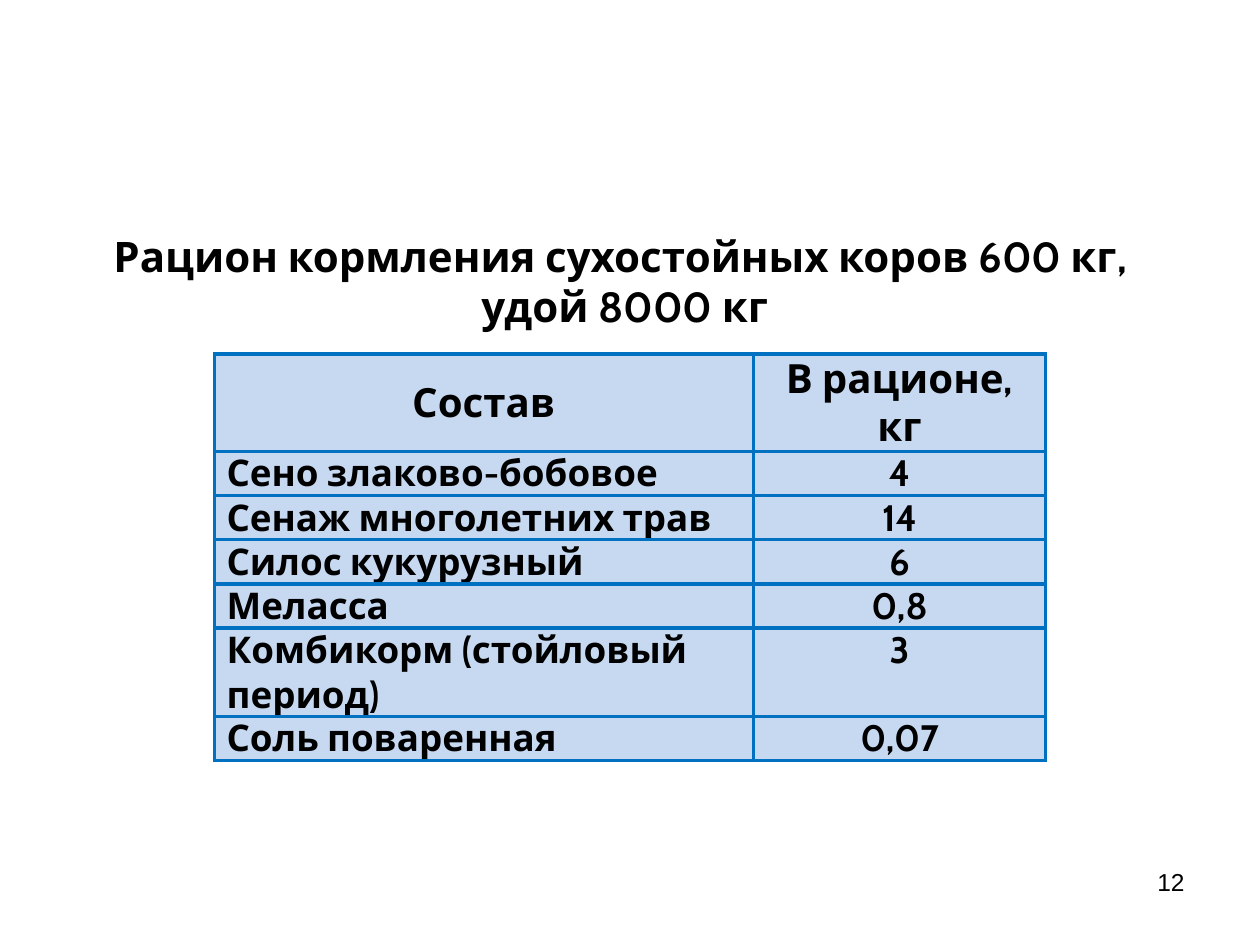
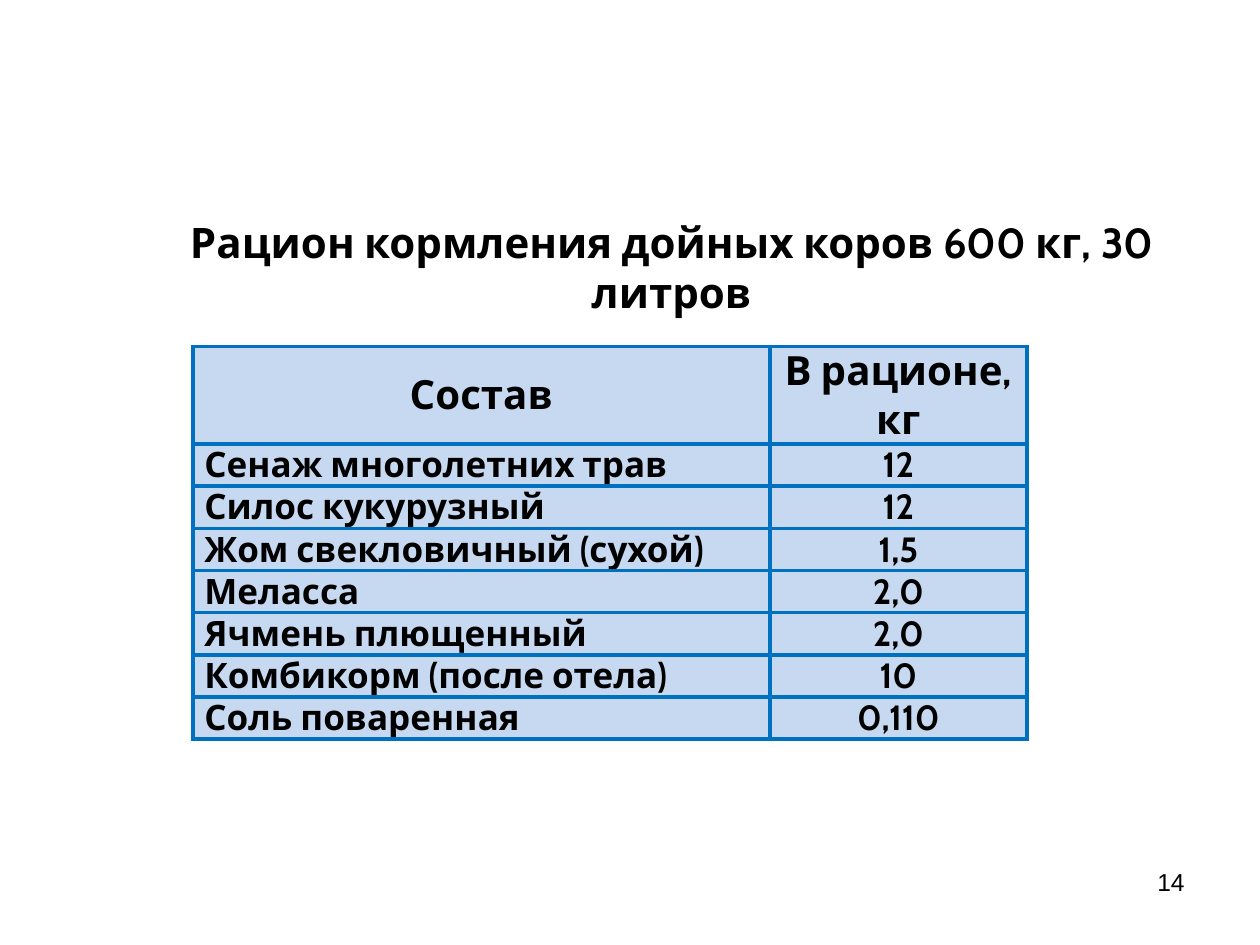
from lxml import etree
from pptx import Presentation
from pptx.dml.color import RGBColor
from pptx.enum.text import MSO_ANCHOR, PP_ALIGN
from pptx.oxml.ns import qn
from pptx.util import Cm, Pt

LEFT, CENTER, RIGHT = PP_ALIGN.LEFT, PP_ALIGN.CENTER, PP_ALIGN.RIGHT
TOP, MIDDLE = MSO_ANCHOR.TOP, MSO_ANCHOR.MIDDLE
COLORS = {"text": "000000", "cell": "C6D9F1", "border": "0070C0"}
BODY_FONT, NUMBER_FONT = "Cabin", "Arial"
BLANK_LAYOUT = 6
BORDER_WIDTH = Pt(2.25)
HEADER = ("Состав", "В рационе, кг")
HEADER_HEIGHT = 1.96
NUMBER_BOX = (18.21, 17.35, 5.92, 1.32)

RATIONS = [
    {
        "title": ["Рацион кормления сухостойных коров 600 кг, ", "удой 8000 кг"],
        "title_box": (1.09, 4.52, 23.01, 2.31),
        "table_at": (4.32, 7.14),
        "columns": (10.87, 5.89),
        "row_height": 0.89,
        "size": 21,
        "margin": 0.25,
        "feed_anchor": MIDDLE,
        "feeds": [
            ("Сено злаково-бобовое", "4"),
            ("Сенаж многолетних трав", "14"),
            ("Силос кукурузный", "6"),
            ("Меласса", "0,8"),
            ("Комбикорм (стойловый период)", "3"),
            ("Соль поваренная", "0,07"),
        ],
        "two_line_feeds": {"Комбикорм (стойловый период)"},
        "number": "12",
    },
    {
        "title": ["Рацион кормления дойных коров 600 кг, 30 литров"],
        "title_box": (2.49, 4.24, 22.1, 2.31),
        "table_at": (3.89, 6.99),
        "columns": (11.63, 5.18),
        "row_height": 0.85,
        "size": 20,
        "margin": 0.23,
        "feed_anchor": TOP,
        "feeds": [
            ("Сенаж многолетних трав", "12"),
            ("Силос кукурузный", "12"),
            ("Жом свекловичный (сухой)", "1,5"),
            ("Меласса", "2,0"),
            ("Ячмень плющенный", "2,0"),
            ("Комбикорм (после отела)", "10"),
            ("Соль поваренная", "0,110"),
        ],
        "two_line_feeds": set(),
        "number": "14",
    },
]


def write(frame, lines, size, align=LEFT, font=BODY_FONT, bold=True):
    """Write lines of text into a text frame, one paragraph each."""
    frame.word_wrap = True
    for index, line in enumerate(lines):
        paragraph = frame.paragraphs[0] if index == 0 else frame.add_paragraph()
        paragraph.alignment = align
        run = paragraph.add_run()
        run.text = line
        run.font.name = font
        run.font.size = Pt(size)
        run.font.bold = bold
        run.font.color.rgb = RGBColor.from_string(COLORS["text"])


def add_text(slide, box, lines, **style):
    """Add a text box in the given box in centimetres."""
    frame = slide.shapes.add_textbox(*map(Cm, box)).text_frame
    write(frame, lines, **style)


def add_borders(cell):
    """Draw a solid line on all four sides of a cell."""
    properties = cell._tc.get_or_add_tcPr()
    for side in ("a:lnL", "a:lnR", "a:lnT", "a:lnB"):
        line = etree.SubElement(properties, qn(side), w=str(BORDER_WIDTH))
        fill = etree.SubElement(line, qn("a:solidFill"))
        etree.SubElement(fill, qn("a:srgbClr"), val=COLORS["border"])


def fill_cell(cell, text, margin, anchor, **style):
    """Give a cell its borders, fill, margins and text."""
    add_borders(cell)
    cell.fill.solid()
    cell.fill.fore_color.rgb = RGBColor.from_string(COLORS["cell"])
    cell.margin_left = cell.margin_right = Cm(margin)
    cell.margin_top = cell.margin_bottom = 0
    cell.vertical_anchor = anchor
    write(cell.text_frame, [text], **style)


def add_feed_table(slide, ration):
    """Add the table of feeds and their amounts."""
    feeds, columns, margin = ration["feeds"], ration["columns"], ration["margin"]
    heights = [HEADER_HEIGHT] + [
        ration["row_height"] * (2 if feed in ration["two_line_feeds"] else 1)
        for feed, _ in feeds
    ]
    box = (*ration["table_at"], sum(columns), sum(heights))
    table = slide.shapes.add_table(len(heights), len(columns), *map(Cm, box)).table
    table.first_row = table.horz_banding = False
    for column, width in zip(table.columns, columns):
        column.width = Cm(width)
    for row, height in zip(table.rows, heights):
        row.height = Cm(height)
    for index, heading in enumerate(HEADER):
        fill_cell(table.cell(0, index), heading, margin, MIDDLE, size=23, align=CENTER)
    for index, (feed, amount) in enumerate(feeds, 1):
        fill_cell(table.cell(index, 0), feed, margin, ration["feed_anchor"],
                  size=ration["size"])
        fill_cell(table.cell(index, 1), amount, margin, TOP,
                  size=ration["size"], align=CENTER)


def add_ration_slide(deck, ration):
    """Add a slide with a title, a feed table and the slide number."""
    slide = deck.slides.add_slide(deck.slide_layouts[BLANK_LAYOUT])
    add_text(slide, ration["title_box"], ration["title"], size=24, align=CENTER)
    add_feed_table(slide, ration)
    add_text(slide, NUMBER_BOX, [ration["number"]], size=14, align=RIGHT,
             font=NUMBER_FONT, bold=False)


def main():
    """Build and save the deck."""
    deck = Presentation()
    deck.slide_width, deck.slide_height = Cm(25.4), Cm(19.05)
    for ration in RATIONS:
        add_ration_slide(deck, ration)
    deck.save("out.pptx")


if __name__ == "__main__":
    main()
